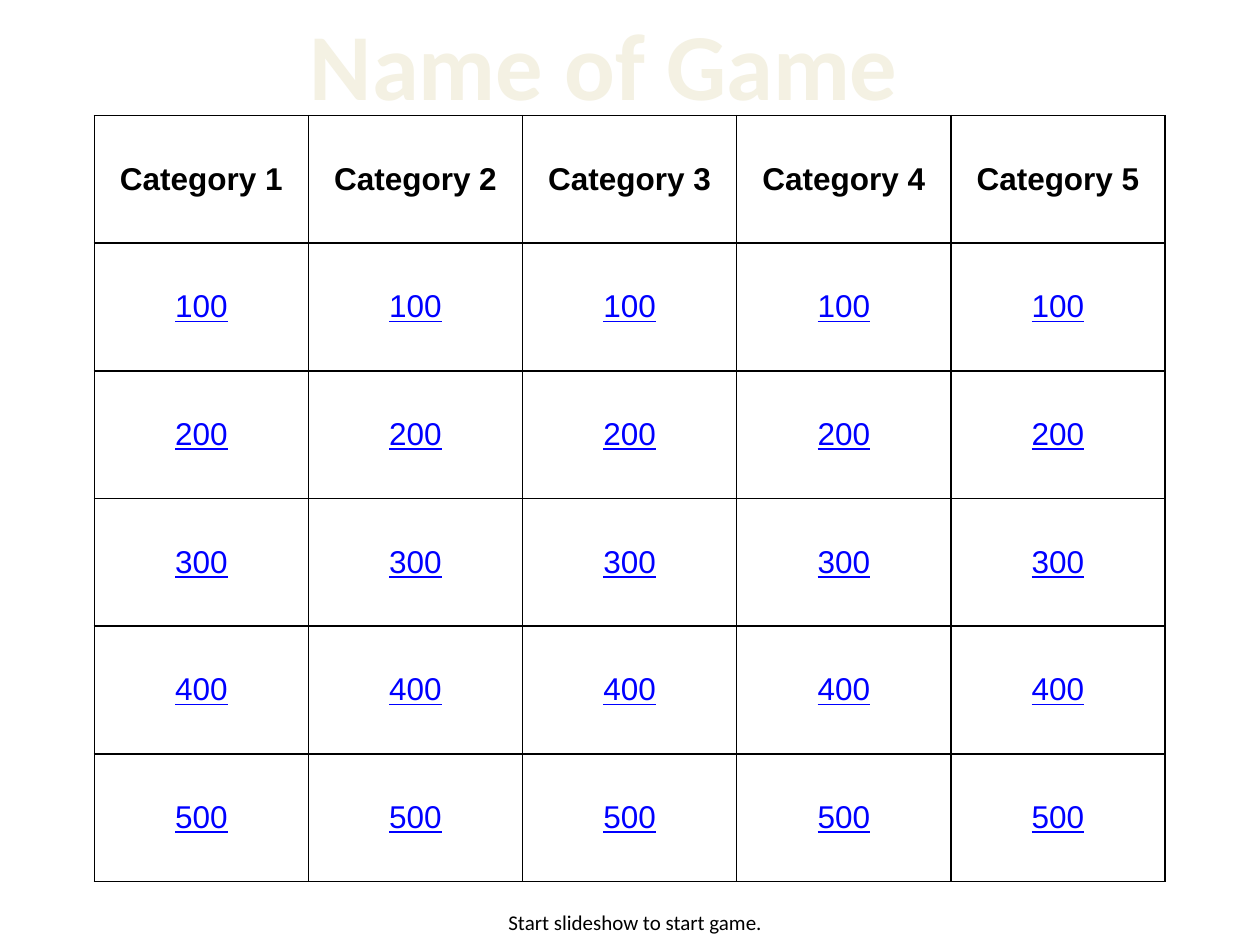
from lxml.etree import SubElement
from pptx import Presentation
from pptx.dml.color import RGBColor
from pptx.enum.text import MSO_ANCHOR, MSO_AUTO_SIZE, PP_ALIGN
from pptx.oxml.ns import qn
from pptx.util import Cm, Pt

CATEGORIES = [f"Category {number}" for number in range(1, 6)]
POINTS = range(100, 600, 100)


def colour(value):
    """Turn a hex string into a colour."""
    return RGBColor.from_string(value)


def add_line(parent, tag, value):
    """Add a solid one-point line element to a properties element."""
    line = SubElement(parent, qn(tag), w=str(Pt(1)))
    fill = SubElement(line, qn("a:solidFill"))
    SubElement(fill, qn("a:srgbClr"), val=value)


def add_span(para, text, font, size, value, bold=False, underline=False):
    """Add one centred run of formatted text and return it."""
    para.alignment = PP_ALIGN.CENTER
    span = para.add_run()
    span.text = text
    span.font.name = font
    span.font.size = Pt(size)
    span.font.bold = bold
    span.font.underline = underline
    span.font.color.rgb = colour(value)
    return span


def add_text_box(page, box, wrap):
    """Add a text box that grows with its text and return its paragraph."""
    frame = page.shapes.add_textbox(*map(Cm, box)).text_frame
    frame.word_wrap = wrap
    frame.auto_size = MSO_AUTO_SIZE.SHAPE_TO_FIT_TEXT
    return frame.paragraphs[0]


def add_title(page, box):
    """Place the outlined name of the game."""
    para = add_text_box(page, box, wrap=False)
    span = add_span(para, "Name of Game", "Calibri", 54, "F4F1E3", bold=True)
    outline = SubElement(span.font._element, qn("a:ln"), w=str(Pt(1)))
    fill = SubElement(outline, qn("a:solidFill"))
    SubElement(fill, qn("a:srgbClr"), val="054697")
    span.font._element.insert(0, outline)


def style_cell(cell):
    """Give a cell black borders, a white fill and a middle anchor."""
    cell.vertical_anchor = MSO_ANCHOR.MIDDLE
    for side in "LRTB":
        add_line(cell._tc.get_or_add_tcPr(), f"a:ln{side}", "000000")
    cell.fill.solid()
    cell.fill.fore_color.rgb = colour("FFFFFF")


def add_board(page, box):
    """Place the grid of categories and point values."""
    left, top, width, height = box
    rows = [CATEGORIES] + [[str(points)] * len(CATEGORIES) for points in POINTS]
    frame = page.shapes.add_table(
        len(rows), len(CATEGORIES), Cm(left), Cm(top), Cm(width), Cm(height)
    )
    board = frame.table
    for column in board.columns:
        column.width = Cm(width / len(CATEGORIES))
    for row_index, texts in enumerate(rows):
        board.rows[row_index].height = Cm(height / len(rows))
        header = row_index == 0
        for column_index, text in enumerate(texts):
            cell = board.cell(row_index, column_index)
            style_cell(cell)
            add_span(
                cell.text_frame.paragraphs[0], text, "Arial", 18,
                "000000" if header else "0000FF",
                bold=header, underline=not header,
            )


def add_hint(page, box):
    """Place the starting hint below the board."""
    para = add_text_box(page, box, wrap=True)
    add_span(para, "Start slideshow to start game.", "Calibri", 12, "000000")


def main():
    """Build and save the game board deck."""
    deck = Presentation()
    deck.slide_width, deck.slide_height = Cm(25.4), Cm(19.05)
    page = deck.slides.add_slide(deck.slide_layouts[6])
    add_board(page, (1.9, 2.33, 21.59, 15.44))
    add_title(page, (5.94, 0, 12.47, 2.57))
    add_hint(page, (2.11, 18.21, 21.39, 0.76))
    deck.save("out.pptx")


if __name__ == "__main__":
    main()
